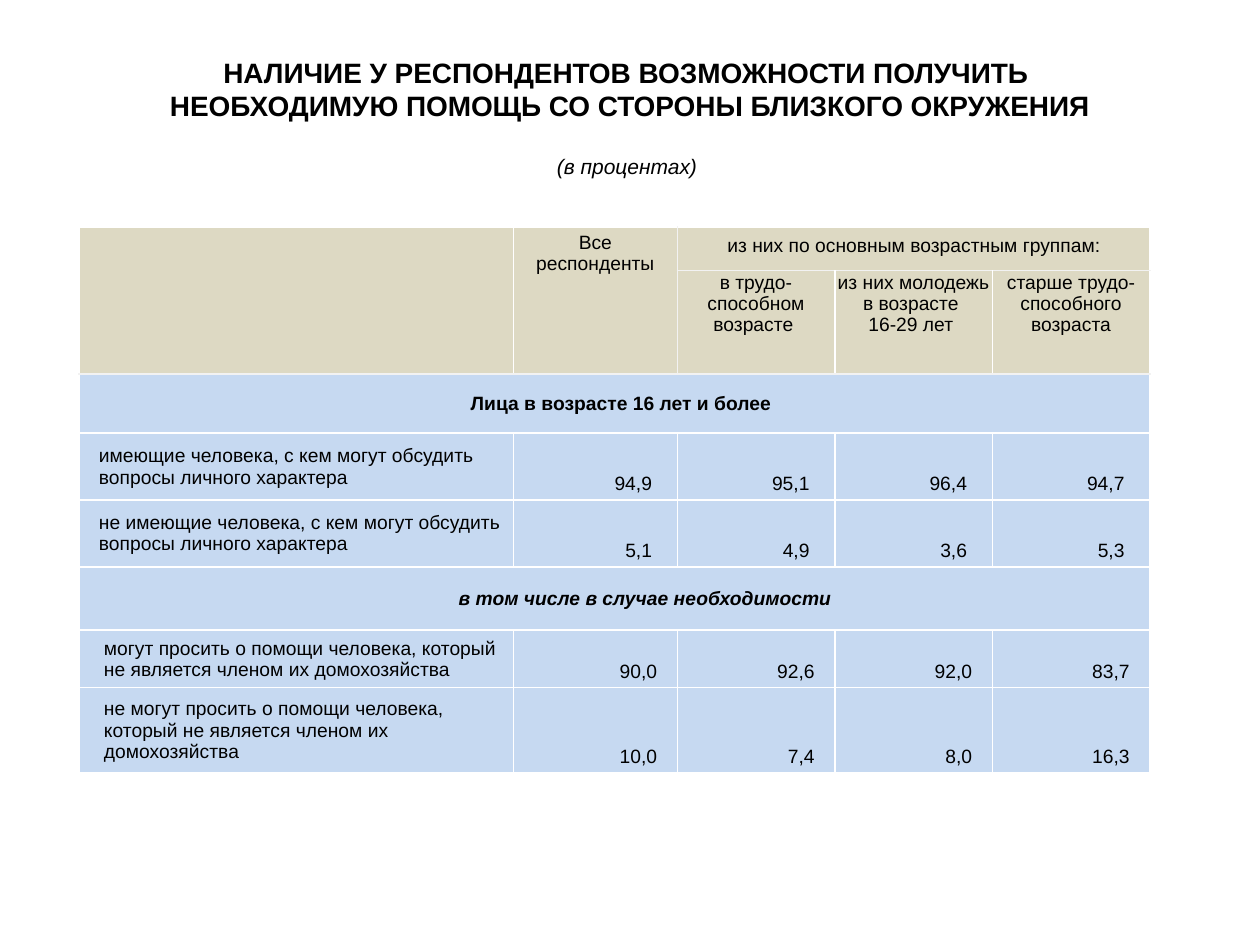
from lxml import etree
from pptx import Presentation
from pptx.dml.color import RGBColor
from pptx.enum.text import MSO_ANCHOR as Anchor, PP_ALIGN as Align
from pptx.oxml.ns import qn
from pptx.util import Pt

BLACK = RGBColor(0, 0, 0)
WHITE = RGBColor(0xFF, 0xFF, 0xFF)
PALE_GREY = RGBColor(0xF2, 0xF2, 0xF2)
BEIGE = RGBColor(0xDD, 0xD9, 0xC3)
LIGHT_BLUE = RGBColor(0xC6, 0xD9, 0xF1)

HEADER_ROWS = 2
COLUMN_WIDTHS = [248.4, 93.6, 90, 90, 90]
ROW_HEIGHTS = [25, 59.2, 33.8, 38.2, 38.2, 36, 32.8, 48.6]


def write_text(text_frame, text, size, alignment, bold=False, italic=False):
    text_frame.word_wrap = True
    text_frame.text = text
    for paragraph in text_frame.paragraphs:
        paragraph.alignment = alignment
        for run in paragraph.runs:
            font = run.font
            font.name, font.size = "Arial", Pt(size)
            font.bold, font.italic = bold, italic
            font.color.rgb = BLACK


def fill_cell(row, column, text, alignment, anchor, margins, **style):
    """Write one cell; margins are left, top, right and bottom in points."""
    cell = table.cell(row, column)
    write_text(cell.text_frame, text, 11, alignment, **style)
    cell.vertical_anchor = anchor
    cell.margin_left, cell.margin_top, cell.margin_right, cell.margin_bottom = map(Pt, margins)


presentation = Presentation()
presentation.slide_width, presentation.slide_height = Pt(720), Pt(540)
slide = presentation.slides.add_slide(presentation.slide_layouts[6])

title = slide.shapes.add_textbox(Pt(0), Pt(28), Pt(720), Pt(55.5))
write_text(
    title.text_frame,
    "НАЛИЧИЕ У РЕСПОНДЕНТОВ ВОЗМОЖНОСТИ ПОЛУЧИТЬ \n"
    "НЕОБХОДИМУЮ ПОМОЩЬ СО СТОРОНЫ БЛИЗКОГО ОКРУЖЕНИЯ",
    16, Align.CENTER, bold=True,
)
subtitle = slide.shapes.add_textbox(Pt(0), Pt(84.2), Pt(720), Pt(21.8))
write_text(subtitle.text_frame, "(в процентах) ", 12, Align.CENTER, italic=True)

table = slide.shapes.add_table(
    len(ROW_HEIGHTS), len(COLUMN_WIDTHS),
    Pt(45), Pt(129.6), Pt(sum(COLUMN_WIDTHS)), Pt(sum(ROW_HEIGHTS)),
).table
for column, width in zip(table.columns, COLUMN_WIDTHS):
    column.width = Pt(width)
for row, height in zip(table.rows, ROW_HEIGHTS):
    row.height = Pt(height)

# Merged areas: first row, first column, last row, last column
for top, left, bottom, right in [
    (0, 0, 1, 0), (0, 1, 1, 1), (0, 2, 0, 4), (2, 0, 2, 4), (5, 0, 5, 4),
]:
    table.cell(top, left).merge(table.cell(bottom, right))

# Header
fill_cell(0, 1, "Все\nреспонденты", Align.CENTER, Anchor.TOP, (0.7, 2.9, 0.7, 0))
fill_cell(0, 2, "из них по основным возрастным группам:",
          Align.CENTER, Anchor.MIDDLE, (0.7, 2.9, 0, 5.8))
age_groups = [
    "в трудо-способном возрасте ",
    "из них молодежь \nв возрасте \n16-29 лет ",
    "старше трудо-способного возраста",
]
for column, age_group in enumerate(age_groups, start=2):
    fill_cell(1, column, age_group, Align.CENTER, Anchor.TOP, (0.7, 0.7, 0.7, 0))

# Section headings
fill_cell(2, 0, "Лица в возрасте 16 лет и более ", Align.CENTER, Anchor.MIDDLE,
          (11.5, 2.9, 0.7, 2.9), bold=True)
fill_cell(5, 0, "в том числе в случае необходимости", Align.CENTER, Anchor.MIDDLE,
          (36, 0.7, 0.7, 0), bold=True, italic=True)

# Each section: first row, label margins, value margins, answers
sections = [
    (3, (11.5, 2.9, 0.7, 2.9), (0.7, 2.9, 14.4, 2.9), [
        ("имеющие человека, с кем могут обсудить вопросы личного характера",
         ["94,9", "95,1", "96,4", "94,7"]),
        ("не имеющие человека, с кем могут обсудить вопросы личного характера",
         ["5,1", "4,9", "3,6", "5,3"]),
    ]),
    (6, (14.4, 0.7, 2.9, 0), (0.7, 0.7, 11.5, 2.9), [
        ("могут просить о помощи человека, который не является членом их домохозяйства",
         ["90,0", "92,6", "92,0", "83,7"]),
        ("не могут просить о помощи человека, который не является членом их домохозяйства",
         ["10,0", "7,4", "8,0", "16,3"]),
    ]),
]
for first_row, label_margins, value_margins, answers in sections:
    for row, (label, values) in enumerate(answers, start=first_row):
        fill_cell(row, 0, label, Align.LEFT, Anchor.MIDDLE, label_margins)
        for column, value in enumerate(values, start=1):
            fill_cell(row, column, value, Align.RIGHT, Anchor.BOTTOM, value_margins)

# Borders and fills; the lines inside and under the header are pale grey
for row in range(len(ROW_HEIGHTS)):
    for column in range(len(COLUMN_WIDTHS)):
        cell = table.cell(row, column)
        if cell.is_spanned:
            continue
        in_header = row < HEADER_ROWS
        bottom = row + cell.span_height
        right = column + cell.span_width
        grey_edges = {
            "a:lnL": in_header and column == 2,
            "a:lnR": in_header and right == 2,
            "a:lnT": row in (1, HEADER_ROWS),
            "a:lnB": bottom in (1, HEADER_ROWS),
        }
        properties = cell._tc.get_or_add_tcPr()
        for edge, is_grey in grey_edges.items():
            line = etree.SubElement(properties, qn(edge), w=str(Pt(1)))
            solid_fill = etree.SubElement(line, qn("a:solidFill"))
            etree.SubElement(solid_fill, qn("a:srgbClr"), val=str(PALE_GREY if is_grey else WHITE))
        cell.fill.solid()
        cell.fill.fore_color.rgb = BEIGE if in_header else LIGHT_BLUE

presentation.save("out.pptx")
